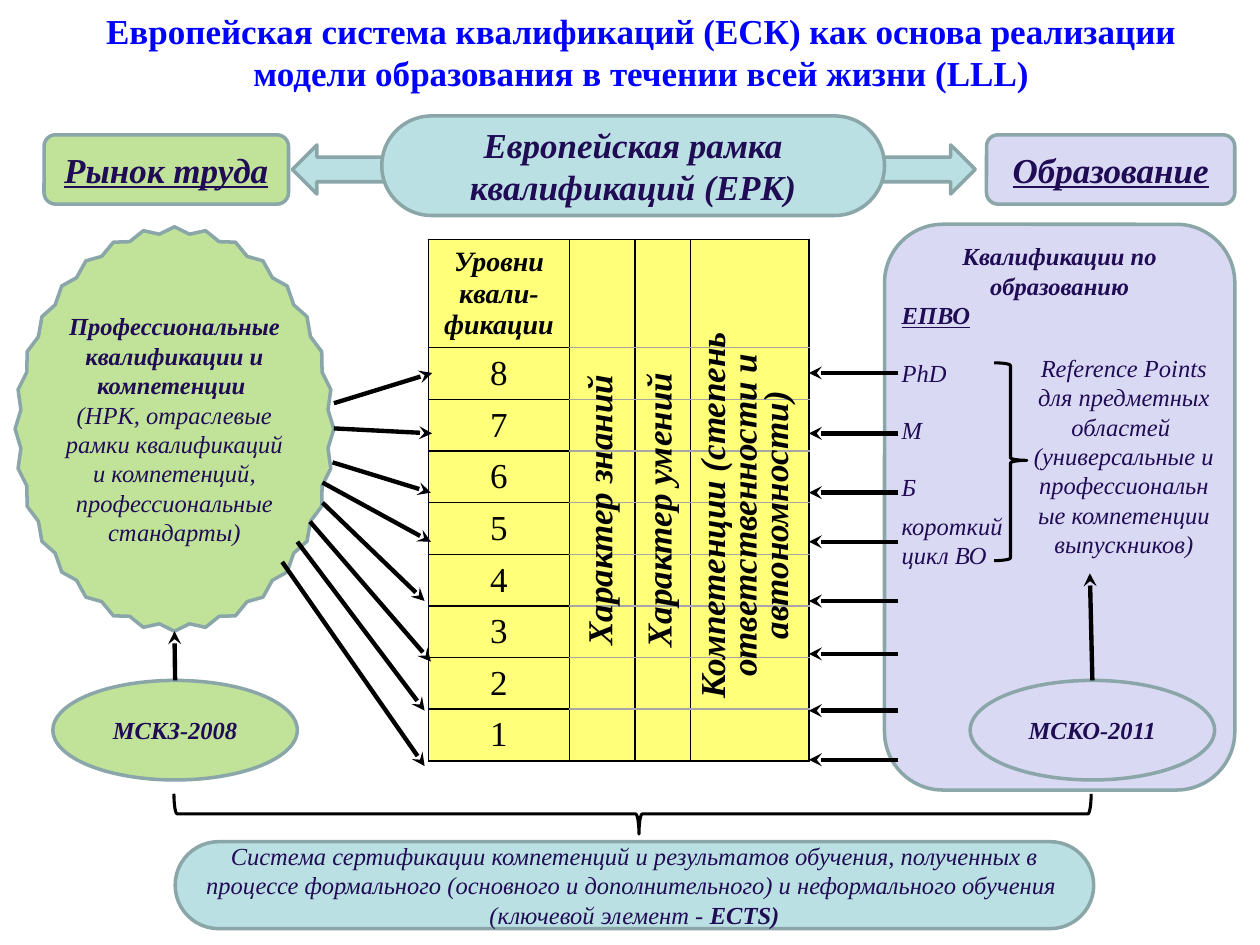
from lxml import etree
from pptx import Presentation
from pptx.dml.color import RGBColor
from pptx.enum.shapes import MSO_CONNECTOR, MSO_SHAPE
from pptx.enum.text import MSO_ANCHOR, PP_ALIGN
from pptx.oxml.ns import qn
from pptx.util import Inches, Pt

ROUNDED, ELLIPSE = MSO_SHAPE.ROUNDED_RECTANGLE, MSO_SHAPE.OVAL
STAR, BRACE = MSO_SHAPE.STAR_32_POINT, MSO_SHAPE.RIGHT_BRACE
DOUBLE_ARROW, STRAIGHT = MSO_SHAPE.LEFT_RIGHT_ARROW, MSO_CONNECTOR.STRAIGHT
CENTER, LEFT = PP_ALIGN.CENTER, PP_ALIGN.LEFT
MIDDLE, TOP = MSO_ANCHOR.MIDDLE, MSO_ANCHOR.TOP

FONT = "Times New Roman"
INK, BLACK, GRAY, TITLE_BLUE = "200B55", "000000", "A6A6A6", "0000FF"
OUTLINE, BLUE, GREEN, LILAC, YELLOW = "8AA6A8", "BBE0E3", "C0E399", "D9D9F3", "FFFF79"


def rgb(color):
    return RGBColor.from_string(color)


def inches(*values):
    return [Inches(value) for value in values]


def style(font, size, color=INK, bold=None, italic=True, underline=None):
    font.name, font.size, font.color.rgb = FONT, Pt(size), rgb(color)
    font.bold, font.italic, font.underline = bold, italic, underline


def write(frame, paragraphs, anchor=MIDDLE, margins=(0.1, 0.05)):
    """Each paragraph is (text, font options, paragraph options)."""
    frame.word_wrap, frame.vertical_anchor = True, anchor
    frame.margin_left = frame.margin_right = Inches(margins[0])
    frame.margin_top = frame.margin_bottom = Inches(margins[1])
    for index, (text, font, layout) in enumerate(paragraphs):
        paragraph = frame.add_paragraph() if index else frame.paragraphs[0]
        paragraph.text = text
        paragraph.alignment = layout.get("align", CENTER)
        if "before" in layout:
            paragraph.space_before = Pt(layout["before"])
        if "spacing" in layout:
            paragraph.line_spacing = layout["spacing"]
        style(paragraph.font, **font)


def add_bold_end(paragraph, text):
    run = paragraph.add_run()
    run.text = text
    run.font.bold = True


def add_figure(slide, kind, box, fill=None, adjustments=()):
    figure = slide.shapes.add_shape(kind, *inches(*box))
    figure.shadow.inherit = False
    for index, value in enumerate(adjustments):
        figure.adjustments[index] = value
    if fill:
        figure.fill.solid()
        figure.fill.fore_color.rgb = rgb(fill)
    else:
        figure.fill.background()
    figure.line.color.rgb = rgb(OUTLINE if fill else BLACK)
    figure.line.width = Pt(2 if fill else 1.75)
    return figure


def add_arrow(slide, start, end):
    arrow = slide.shapes.add_connector(STRAIGHT, *inches(*start, *end))
    arrow.line.color.rgb, arrow.line.width = rgb(BLACK), Pt(2.5)
    etree.SubElement(arrow.line._get_or_add_ln(), qn("a:tailEnd"), type="stealth")
    etree.SubElement(arrow._element.spPr, qn("a:effectLst"))


def add_brace(slide, box):
    return add_figure(slide, BRACE, box, adjustments=(0.083, 0.493))


def add_title(slide, box):
    title = slide.shapes.add_textbox(*inches(*box))
    text = ("Европейская система квалификаций (ЕСК) как основа реализации "
            "модели образования в течении всей жизни (LLL)")
    write(title.text_frame, [(text, dict(size=20, color=TITLE_BLUE, bold=True, italic=False), {})])


def add_header(slide, box):
    left, top, width, height = box
    heading = dict(size=20, bold=True)
    add_figure(slide, DOUBLE_ARROW, (left + 1.97, top + 0.23, 5.42, 0.39), BLUE)
    framework = add_figure(slide, ROUNDED, (left + 2.68, top, 3.99, height), BLUE, [0.5])
    write(framework.text_frame, [("Европейская рамка квалификаций (ЕРК)", heading, {})],
          margins=(0.1, 0))
    for text, x, label_width, fill in (("Рынок труда", left, 1.94, GREEN),
                                       ("Образование", left + width - 1.97, 1.97, LILAC)):
        label = add_figure(slide, ROUNDED, (x, top + 0.15, label_width, 0.55), fill)
        write(label.text_frame, [(text, dict(heading, underline=True), {})])


def add_classifier(slide, box, text, fill, target):
    """Ellipse with a standard's name and an arrow up to the target."""
    left, top, width, height = box
    classifier = add_figure(slide, ELLIPSE, box, fill)
    write(classifier.text_frame, [(text, dict(size=14, bold=True), {})])
    add_arrow(slide, (left + width / 2, top), target)


def add_labour_market(slide, box):
    left, top, width, height = box
    star = add_figure(slide, STAR, box, GREEN, [0.484])
    write(star.text_frame, [
        ("Профессиональные квалификации и компетенции ", dict(size=14, bold=True), {}),
        ("(НРК, отраслевые рамки квалификаций и компетенций, профессиональные стандарты)",
         dict(size=14), {})], margins=(0, 0))
    add_classifier(slide, (left + 0.3, top + 3.6, 1.94, 0.79), "МСКЗ-2008", GREEN,
                   (left + width / 2, top + height))


def set_borders(cell, sides):
    properties = cell._tc.get_or_add_tcPr()
    for side, color in zip("LRTB", sides):
        border = etree.SubElement(properties, qn(f"a:ln{side}"), w=str(Pt(1)))
        fill = etree.SubElement(border, qn("a:solidFill"))
        etree.SubElement(fill, qn("a:srgbClr"), val=color)


def add_levels(slide, box):
    left, top, width, height = box
    labels = ["Уровни квали-фикации", *(str(level) for level in range(8, 0, -1))]
    last, level_height = len(labels) - 1, 0.41
    table = slide.shapes.add_table(len(labels), 4, *inches(*box)).table
    table.first_row = table.horz_banding = False
    for column, column_width in zip(table.columns, (1.12, 0.52, 0.44, 0.94)):
        column.width = Inches(column_width)
    for row, label in enumerate(labels):
        table.rows[row].height = Inches(level_height if row else height - last * level_height)
        for column in range(4):
            cell = table.cell(row, column)
            upper = BLACK if column == 0 or row == 0 else GRAY
            lower = BLACK if column == 0 or row == last else GRAY
            set_borders(cell, (BLACK, BLACK, upper, lower))
            cell.fill.solid()
            cell.fill.fore_color.rgb = rgb(YELLOW)
            cell.margin_top = cell.margin_bottom = Inches(0.03)
            cell.vertical_anchor = MIDDLE
        paragraph = table.cell(row, 0).text_frame.paragraphs[0]
        paragraph.text, paragraph.alignment = label, CENTER
        style(paragraph.font, 20 if row else 16, BLACK, row == 0, row == 0)

    # Descriptors running up the columns
    for text, x, y, text_width, spacing in (
            ("Характер знаний", 1.18, 0.12, 0.34, 1),
            ("Характер умений", 1.65, 0.12, 0.34, 1),
            ("Компетенции (степень ответственности и автономности)", 2.15, 0.16, 0.76, 0.75)):
        descriptor = slide.shapes.add_textbox(*inches(left + x, top + y, text_width, 4.06))
        write(descriptor.text_frame, [(text, dict(size=20, color=BLACK, bold=True),
                                       dict(spacing=spacing))], margins=(0, 0))
        descriptor.text_frame._txBody.bodyPr.set("vert", "vert270")


def add_education(slide, box):
    left, top, width, height = box
    panel = add_figure(slide, ROUNDED, box, LILAC)
    bold, plain = dict(size=14, bold=True), dict(size=14)
    degree = dict(align=LEFT, before=16)
    write(panel.text_frame, [
        ("Квалификации по образованию", bold, {}),
        ("ЕПВО", dict(bold, underline=True), dict(align=LEFT)),
        ("PhD", plain, degree), ("M", plain, degree), ("Б", plain, degree),
        ("короткий \vцикл ВО", plain, dict(align=LEFT, before=5))], TOP, (0, 0))
    add_brace(slide, (left + 0.87, top + 1.1, 0.26, 1.57))
    reference = slide.shapes.add_textbox(*inches(left + 1.07, top + 0.97, 1.66, 1.75))
    write(reference.text_frame, [
        ("Reference Points", plain, {}),
        ("для предметных областей \v(универсальные и профессиональные компетенции выпускников)",
         plain, {})], TOP)
    add_classifier(slide, (left + 0.68, top + 3.62, 1.94, 0.79), "МСКО-2011", LILAC,
                   (left + 1.63, top + 2.77))


def add_level_links(slide, market_side, table_left, table_right, education_side):
    # Start on the star (x, y), arrowhead at the table's left edge (offset, y)
    for start_x, start_y, offset, end_y in (
            (2.65, 3.2, 0.03, 2.96), (2.65, 3.4, 0.03, 3.44), (2.64, 3.67, 0.02, 3.91),
            (2.56, 3.83, 0.02, 4.3), (2.56, 3.99, -0.03, 4.77), (2.46, 4.14, 0.02, 5.25),
            (2.36, 4.3, -0.03, 5.64), (2.24, 4.46, -0.03, 6.08)):
        add_arrow(slide, (min(start_x, market_side), start_y), (table_left + offset, end_y))
    for y in (2.96, 3.44, 3.91, 4.3, 4.77, 5.19, 5.64, 6.03):
        add_arrow(slide, (education_side, y), (table_right, y))


def add_certification(slide, box):
    left, top, width, height = box
    brace = add_brace(slide, (left + 3.47, top - 3.86, 0.32, 7.28))
    brace.rotation = 90
    system = add_figure(slide, ROUNDED, box, BLUE, [0.5])
    text = ("Система сертификации компетенций и результатов обучения, полученных в процессе "
            "формального (основного и дополнительного) и неформального обучения "
            "\v(ключевой элемент - ")
    write(system.text_frame, [(text, dict(size=14), {})], margins=(0.1, 0))
    add_bold_end(system.text_frame.paragraphs[0], "ECTS)")


def main():
    deck = Presentation()
    deck.slide_width, deck.slide_height = inches(10, 7.5)
    slide = deck.slides.add_slide(deck.slide_layouts[6])
    add_title(slide, (0.48, 0.13, 9.22, 0.55))
    add_labour_market(slide, (0.12, 1.8, 2.53, 3.21))
    add_levels(slide, (3.4, 1.9, 3.02, 4.12))
    add_header(slide, (0.35, 0.92, 9.45, 0.79))
    add_education(slide, (7.02, 1.78, 2.78, 4.49))
    add_level_links(slide, 2.65, 3.4, 6.42, 7.13)
    add_certification(slide, (1.39, 6.68, 7.29, 0.69))
    deck.save("out.pptx")


if __name__ == "__main__":
    main()
